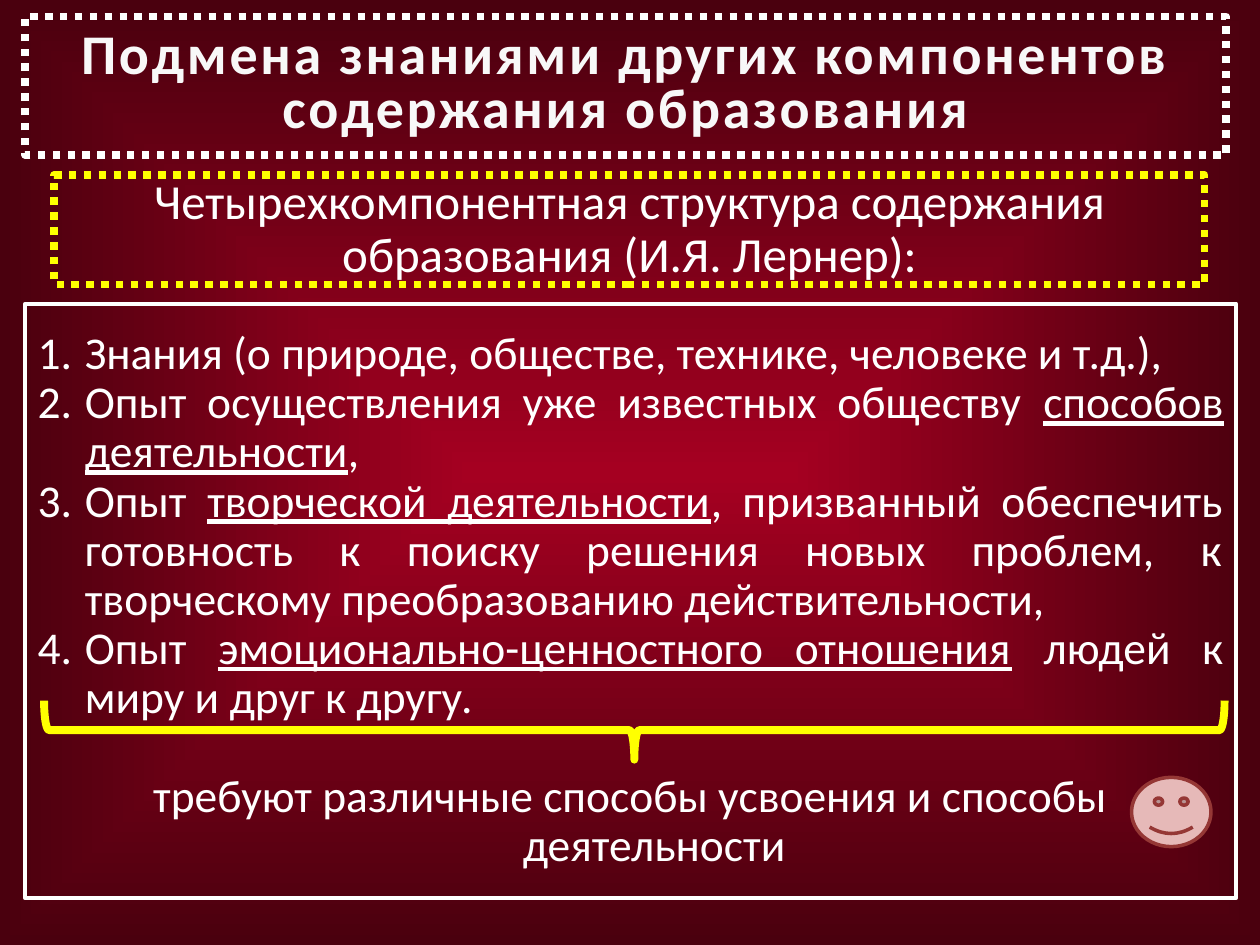
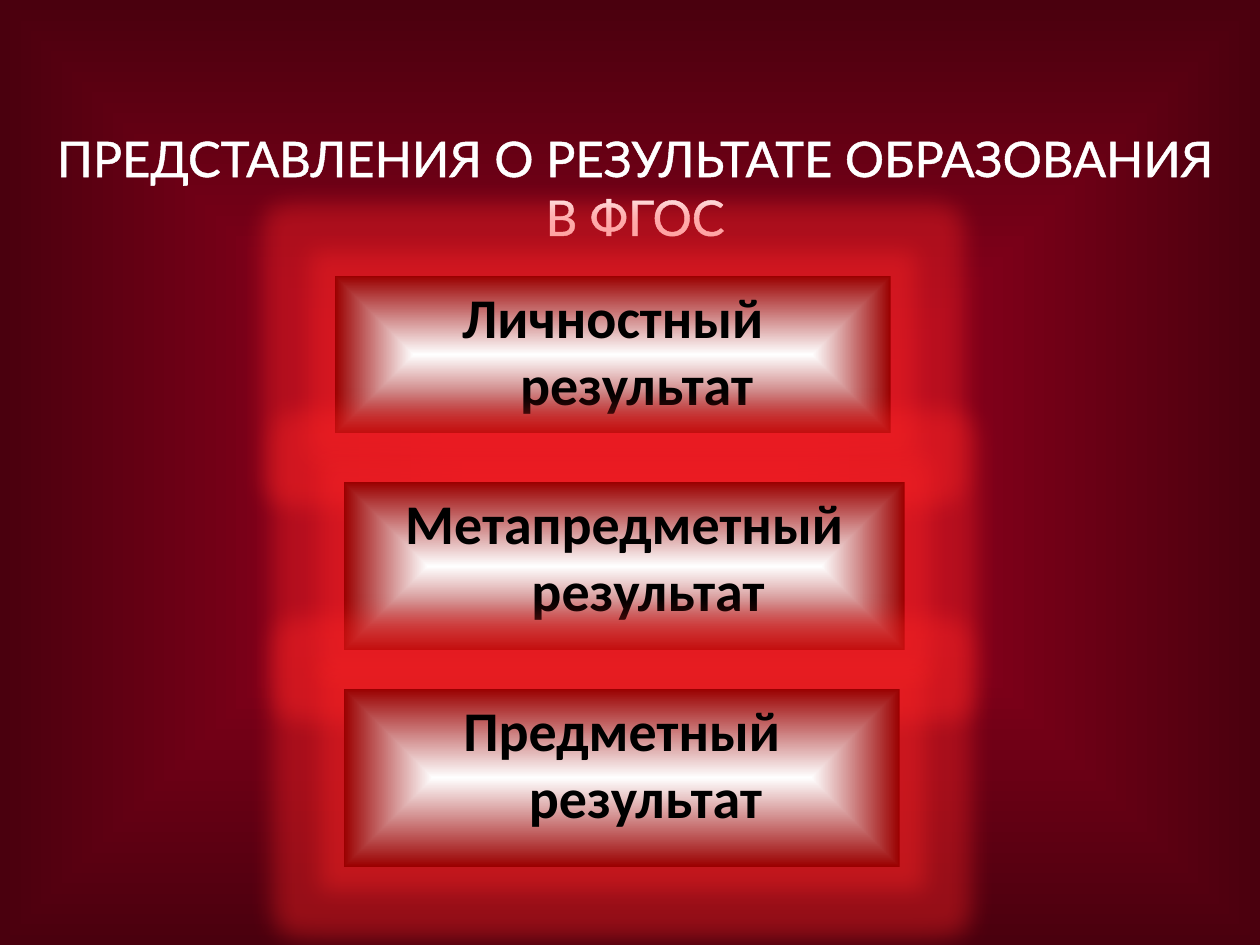
from dataclasses import dataclass

from lxml.etree import SubElement
from pptx import Presentation
from pptx.dml.color import RGBColor
from pptx.enum.dml import MSO_LINE
from pptx.enum.shapes import MSO_SHAPE
from pptx.enum.text import MSO_ANCHOR, PP_ALIGN
from pptx.oxml import parse_xml
from pptx.oxml.ns import nsdecls, qn
from pptx.util import Pt


@dataclass(frozen=True)
class Theme:
    """Colours, fonts and type sizes of the deck."""
    centre: str = "A50021"
    edge: str = "4A000E"
    white: str = "FFFFFF"
    title: str = "F8F8F8"
    yellow: str = "FFFF00"
    black: str = "000000"
    button_edge: str = "9A0000"
    glow: str = "FF2424"
    face: str = "E6B9B8"
    face_line: str = "953735"
    font: str = "Calibri"
    caption_font: str = "Lato"
    big: int = 32
    medium: int = 28
    body: int = 26
    hang: float = 27


T = Theme()


def rgb(value):
    """Turn a hex string into a colour."""
    return RGBColor.from_string(value)


def set_gradient(fill, root, inner, outer):
    """Fill with a gradient that runs from the middle to the edges."""
    fill.gradient()
    for stop, color in zip(fill.gradient_stops, (inner, outer)):
        stop.color.rgb = rgb(color)
    grad = root.find(".//" + qn("a:gradFill"))
    grad.remove(grad.find(qn("a:lin")))
    grad.append(parse_xml(
        f'<a:path {nsdecls("a")} path="shape">'
        '<a:fillToRect l="50000" t="50000" r="50000" b="50000"/></a:path>'))


def add_slide(prs):
    """Add a blank slide with the shared background."""
    s = prs.slides.add_slide(prs.slide_layouts[6])
    set_gradient(s.background.fill, s.element, T.centre, T.edge)
    return s


def add_box(s, box, kind=MSO_SHAPE.RECTANGLE, fill=None, line=None, width=0, dash=None):
    """Add a preset shape with its fill and line."""
    sp = s.shapes.add_shape(kind, *(Pt(v) for v in box))
    sp.shadow.inherit = False
    if fill:
        sp.fill.solid()
        sp.fill.fore_color.rgb = rgb(fill)
    else:
        sp.fill.background()
    if line:
        sp.line.color.rgb = rgb(line)
        sp.line.width = Pt(width)
        if dash:
            sp.line.dash_style = dash
    else:
        sp.line.fill.background()
    return sp


def add_text(tf, text, size=T.body, color=T.white, font=T.font, bold=False, align=PP_ALIGN.CENTER,
             spacing=None, before=None, hang=0, numbered=False, tracking=0):
    """Add a paragraph; parts between underscores are underlined."""
    tf.word_wrap = True
    p = tf.paragraphs[0]
    if p.runs:
        p = tf.add_paragraph()
    pPr = p._p.get_or_add_pPr()
    if hang:
        pPr.set("marL", str(Pt(hang)))
        pPr.set("indent", str(-Pt(hang)))
    if numbered:
        SubElement(pPr, qn("a:buFont"), typeface=font)
        SubElement(pPr, qn("a:buAutoNum"), type="arabicPeriod")
    p.alignment = align
    if spacing:
        p.line_spacing = spacing
    if before:
        p.space_before = Pt(before)
    for i, part in enumerate(text.split("_")):
        r = p.add_run()
        r.text = part
        r.font.size = Pt(size)
        r.font.name = font
        r.font.bold = bold
        r.font.color.rgb = rgb(color)
        if i % 2:
            r.font.underline = True
        if tracking:
            r._r.get_or_add_rPr().set("spc", str(round(tracking * 100)))
    return p


def framed_heading(s, box, text, line, **fmt):
    """Draw a heading in a dotted frame."""
    sp = add_box(s, box, line=line, width=4.25, dash=MSO_LINE.ROUND_DOT)
    sp.text_frame.vertical_anchor = MSO_ANCHOR.MIDDLE
    add_text(sp.text_frame, text, **fmt)


def components_panel(s, box, items, conclusion):
    """Draw the numbered list, the brace under it and the conclusion."""
    x, y, w, h = box
    sp = add_box(s, box, line=T.white, width=2.25)
    tf = sp.text_frame
    tf.vertical_anchor = MSO_ANCHOR.MIDDLE
    for item in items:
        add_text(tf, item, align=PP_ALIGN.JUSTIFY, spacing=0.9, hang=T.hang, numbered=True)
    add_text(tf, conclusion, spacing=0.9, before=28.5, hang=T.hang)
    depth, span = 33.8, 674.6
    brace_box = (x + 10.8 + (span - depth) / 2, y + 226.8 + (depth - span) / 2, depth, span)
    brace = add_box(s, brace_box, MSO_SHAPE.LEFT_BRACE, line=T.yellow, width=4.5)
    brace.rotation = 270
    add_box(s, (x + w - 59.7, y + h - 69.1, 45.4, 39.6), MSO_SHAPE.SMILEY_FACE,
            fill=T.face, line=T.face_line, width=2)


def caption(s, box, text):
    """Draw the outlined caption with a soft text shadow."""
    tf = s.shapes.add_textbox(*(Pt(v) for v in box)).text_frame
    tf.vertical_anchor = MSO_ANCHOR.BOTTOM
    tf.margin_left = tf.margin_right = tf.margin_bottom = 0
    p = add_text(tf, text, size=T.medium, font=T.caption_font)
    rPr = p.runs[0]._r.get_or_add_rPr()
    rPr.insert(0, parse_xml(
        f'<a:ln {nsdecls("a")} w="{Pt(1.45)}"><a:solidFill><a:srgbClr val="{T.white}"/>'
        '</a:solidFill></a:ln>'))
    rPr.insert(2, parse_xml(
        f'<a:effectLst {nsdecls("a")}><a:outerShdw blurRad="{Pt(3)}" dist="{Pt(2)}" dir="2700000">'
        f'<a:srgbClr val="{T.black}"><a:alpha val="50000"/></a:srgbClr>'
        '</a:outerShdw></a:effectLst>'))


def result_button(s, box, text):
    """Draw a glowing button with a gradient."""
    sp = add_box(s, box)
    set_gradient(sp.fill, sp._element, T.white, T.button_edge)
    sp._element.spPr.find(qn("a:effectLst")).append(parse_xml(
        f'<a:glow {nsdecls("a")} rad="{Pt(28)}"><a:srgbClr val="{T.glow}">'
        '<a:alpha val="40000"/></a:srgbClr></a:glow>'))
    sp.text_frame.vertical_anchor = MSO_ANCHOR.TOP
    add_text(sp.text_frame, text, size=T.big, color=T.black, bold=True, hang=T.hang)


def components_slide(prs):
    """Build the slide on the four components of content."""
    s = add_slide(prs)
    framed_heading(s, (31, 100, 657.4, 62.6),
                   "Четырехкомпонентная структура содержания образования (И.Я. Лернер):",
                   T.yellow, size=T.medium, spacing=0.9)
    framed_heading(s, (14.4, 9.4, 686.2, 79.2),
                   "Подмена знаниями других компонентов содержания образования",
                   T.white, size=T.big, color=T.title, bold=True, spacing=0.8, tracking=1.5)
    components_panel(s, (14.4, 173.5, 691.9, 339.8), [
        "Знания (о природе, обществе, технике, человеке и т.д.),",
        "Опыт осуществления уже известных обществу _способов деятельности_,",
        "Опыт _творческой деятельности_, призванный обеспечить готовность к поиску "
        "решения новых проблем, к творческому преобразованию действительности,",
        "Опыт _эмоционально-ценностного отношения_ людей к миру и друг к другу.",
    ], "требуют различные способы усвоения и способы деятельности")


def results_slide(prs):
    """Build the slide on the three kinds of result."""
    s = add_slide(prs)
    caption(s, (28.1, 61.9, 669.6, 78.5), "ПРЕДСТАВЛЕНИЯ О РЕЗУЛЬТАТЕ ОБРАЗОВАНИЯ В ФГОС")
    buttons = [("Личностный", 191.5, 317.5, 90), ("Метапредметный", 196.6, 320.4, 95.8),
               ("Предметный", 196.6, 317.5, 101.5)]
    for i, (name, x, w, h) in enumerate(buttons):
        result_button(s, (x, 157.7 + 118 * i, w, h), f"{name} результат")


def main():
    """Build and save the deck."""
    prs = Presentation()
    prs.slide_width, prs.slide_height = Pt(720), Pt(540)
    components_slide(prs)
    results_slide(prs)
    prs.save("out.pptx")


if __name__ == "__main__":
    main()
